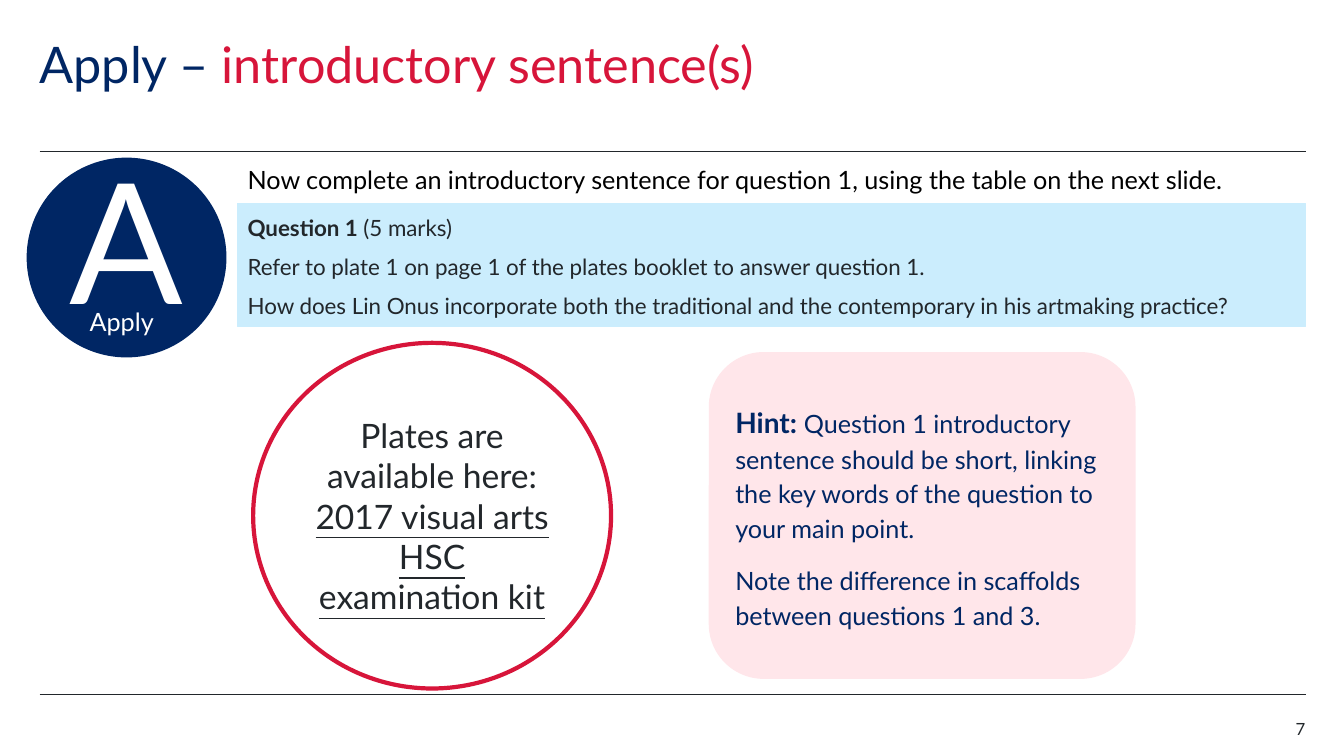
from dataclasses import dataclass
from typing import Optional

from lxml import etree
from pptx import Presentation
from pptx.dml.color import RGBColor
from pptx.enum.shapes import MSO_CONNECTOR, MSO_SHAPE
from pptx.enum.text import MSO_ANCHOR, PP_ALIGN
from pptx.oxml.ns import qn
from pptx.util import Cm, Pt

OVAL, RECTANGLE, ROUNDED = MSO_SHAPE.OVAL, MSO_SHAPE.RECTANGLE, MSO_SHAPE.ROUNDED_RECTANGLE
LEFT, CENTER, RIGHT = PP_ALIGN.LEFT, PP_ALIGN.CENTER, PP_ALIGN.RIGHT
TOP, MIDDLE = MSO_ANCHOR.TOP, MSO_ANCHOR.MIDDLE
STRAIGHT = MSO_CONNECTOR.STRAIGHT


@dataclass(frozen=True)
class Theme:
    font: str = "Lato"
    navy: str = "002664"
    red: str = "D7153A"
    ink: str = "22272B"
    black: str = "000000"
    white: str = "FFFFFF"
    sky: str = "CBEDFD"
    pink: str = "FFE6EA"
    letter: int = 120
    title: int = 36
    plates: int = 24
    hint: int = 20
    body: int = 18
    question: int = 16
    number: int = 12


THEME = Theme()


@dataclass(frozen=True)
class Run:
    text: str
    size: int
    color: str
    bold: bool = False
    underline: bool = False


@dataclass(frozen=True)
class Box:
    """A text block, in centimetres; it is a plain text box without a preset."""
    place: tuple[float, float, float, float]
    paragraphs: list[list[Run]]
    preset: Optional[MSO_SHAPE] = None
    fill: str = THEME.white
    outline: str = THEME.white
    outline_width: float = 1
    anchor: MSO_ANCHOR = TOP
    align: PP_ALIGN = LEFT
    line_spacing: float = 1.0
    gap: float = 0
    insets: tuple[float, float, float, float] = (0.25, 0.13, 0.25, 0.13)


NO_INSETS = (0, 0, 0, 0)
MARGIN_LEFT, MARGIN_RIGHT = 1, 32.9
RULE_HEIGHTS = (3.81, 17.5)
CONTENT_LEFT = 5.99
CONTENT_WIDTH = MARGIN_RIGHT - CONTENT_LEFT

BOXES = [
    # Title
    Box((MARGIN_LEFT, 1, 28, 2.79),
        [[Run("Apply – ", THEME.title, THEME.navy),
          Run("introductory sentence(s)", THEME.title, THEME.red)]],
        line_spacing=0.9, insets=NO_INSETS),
    # Apply badge: the deep lower inset lifts the letter above its caption
    Box((0.69, 3.99, 5, 5), [[Run("A", THEME.letter, THEME.white)]],
        preset=OVAL, fill=THEME.navy, outline=THEME.navy, anchor=MIDDLE,
        align=CENTER, insets=(0.25, 0.13, 0.25, 1.15)),
    Box((2.26, 7.72, 1.85, 1.22), [[Run("Apply", THEME.body, THEME.white)]],
        insets=NO_INSETS),
    # Instruction and question
    Box((CONTENT_LEFT, 4.01, CONTENT_WIDTH, 1.02),
        [[Run("Now complete an introductory sentence for question 1, "
              "using the table on the next slide.", THEME.body, THEME.black)]]),
    Box((CONTENT_LEFT, 5.13, CONTENT_WIDTH, 3.1),
        [[Run("Question 1 ", THEME.question, THEME.ink, bold=True),
          Run("(5 marks)", THEME.question, THEME.ink)],
         [Run("Refer to plate 1 on page 1 of the plates booklet to answer question 1.",
              THEME.question, THEME.ink)],
         [Run("How does Lin Onus incorporate both the traditional and the contemporary "
              "in his artmaking practice?", THEME.question, THEME.ink)]],
        preset=RECTANGLE, fill=THEME.sky, outline=THEME.sky, anchor=MIDDLE,
        line_spacing=1.14, gap=6),
    # Where to find the plates
    Box((6.38, 8.64, 9.02, 8.71),
        [[Run("Plates are available here:", THEME.plates, THEME.ink)],
         [Run("2017 visual arts HSC examination kit", THEME.plates, THEME.ink,
              underline=True)]],
        preset=OVAL, outline=THEME.red, outline_width=3, anchor=MIDDLE, align=CENTER),
    # Hint
    Box((17.88, 8.89, 10.72, 8.2),
        [[Run("Hint: ", THEME.hint, THEME.navy, bold=True),
          Run("Question 1 introductory sentence should be short, linking the key words "
              "of the question to your main point.", THEME.body, THEME.navy)],
         [Run("Note the difference in scaffolds between questions 1 and 3.",
              THEME.body, THEME.navy)]],
        preset=ROUNDED, fill=THEME.pink, outline=THEME.pink, anchor=MIDDLE,
        line_spacing=1.15, gap=12),
    # Slide number
    Box((30.9, 18.11, 2, 0.51), [[Run("7", THEME.number, THEME.ink)]],
        align=RIGHT, insets=NO_INSETS),
]


def apply_format(target, values: dict) -> None:
    for name, value in values.items():
        setattr(target, name, value)


def write_text(text_frame, box: Box) -> None:
    left, top, right, bottom = (Cm(inset) for inset in box.insets)
    apply_format(text_frame, {
        "word_wrap": True, "vertical_anchor": box.anchor,
        "margin_left": left, "margin_top": top,
        "margin_right": right, "margin_bottom": bottom,
    })
    for index, runs in enumerate(box.paragraphs):
        paragraph = text_frame.add_paragraph() if index else text_frame.paragraphs[0]
        apply_format(paragraph, {
            "alignment": box.align, "line_spacing": box.line_spacing,
            "space_before": Pt(box.gap if index else 0),
        })
        for item in runs:
            run = paragraph.add_run()
            run.text = item.text
            apply_format(run.font, {
                "name": THEME.font, "size": Pt(item.size),
                "bold": item.bold, "underline": item.underline,
            })
            run.font.color.rgb = RGBColor.from_string(item.color)


def draw_box(slide, box: Box) -> None:
    place = [Cm(length) for length in box.place]
    if box.preset is None:
        shape = slide.shapes.add_textbox(*place)
    else:
        shape = slide.shapes.add_shape(box.preset, *place)
        shape.shadow.inherit = False
        shape.fill.solid()
        shape.fill.fore_color.rgb = RGBColor.from_string(box.fill)
        shape.line.color.rgb = RGBColor.from_string(box.outline)
        shape.line.width = Pt(box.outline_width)
    write_text(shape.text_frame, box)


def draw_rule(slide, height: float) -> None:
    rule = slide.shapes.add_connector(
        STRAIGHT, Cm(MARGIN_LEFT), Cm(height), Cm(MARGIN_RIGHT), Cm(height))
    rule.line.color.rgb = RGBColor.from_string(THEME.ink)
    rule.line.width = Pt(0.5)
    etree.SubElement(rule.element.spPr, qn("a:effectLst"))


def main() -> None:
    presentation = Presentation()
    presentation.slide_width, presentation.slide_height = Cm(33.87), Cm(19.05)
    slide = presentation.slides.add_slide(presentation.slide_layouts[6])
    for height in RULE_HEIGHTS:
        draw_rule(slide, height)
    for box in BOXES:
        draw_box(slide, box)
    presentation.save("out.pptx")


if __name__ == "__main__":
    main()
